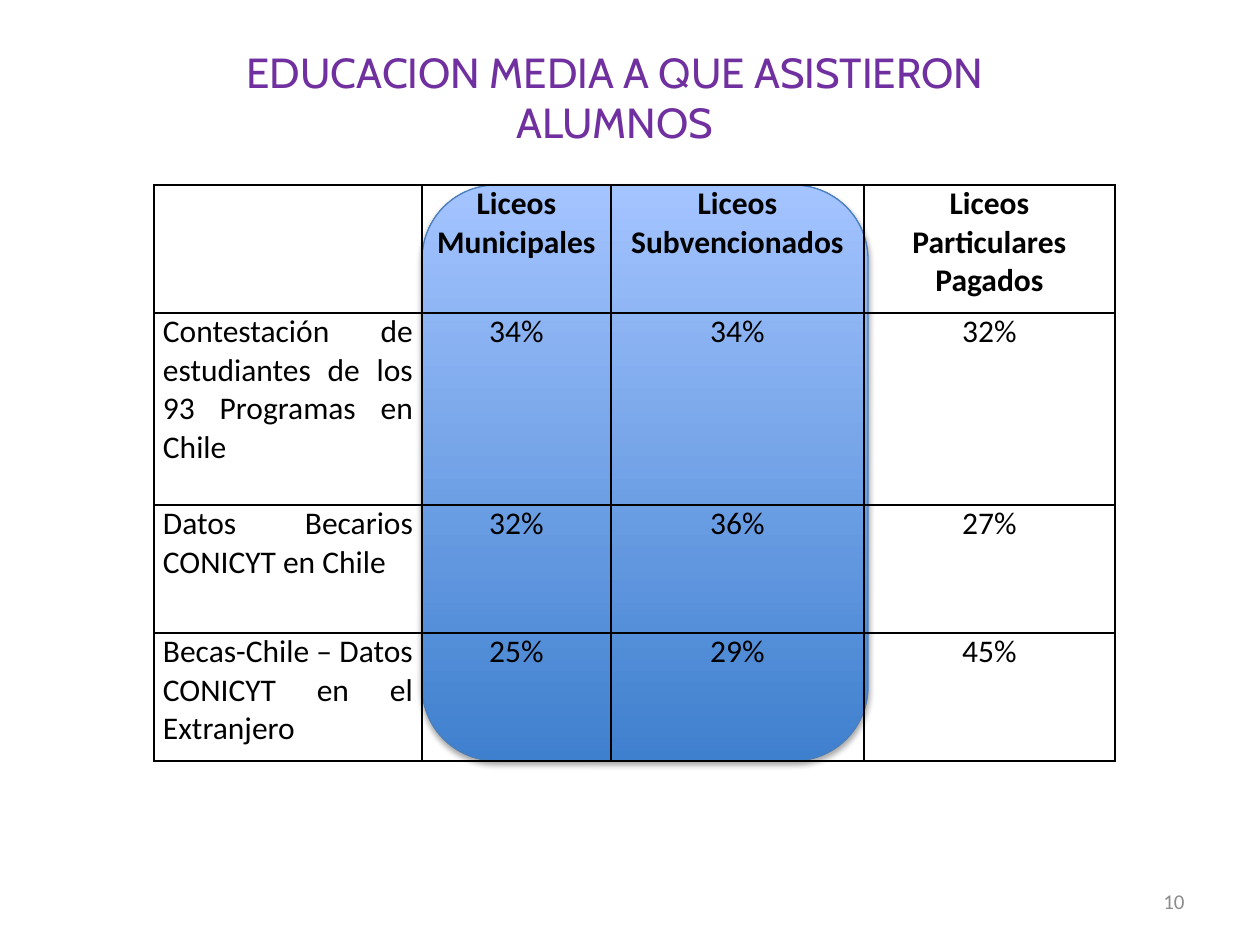
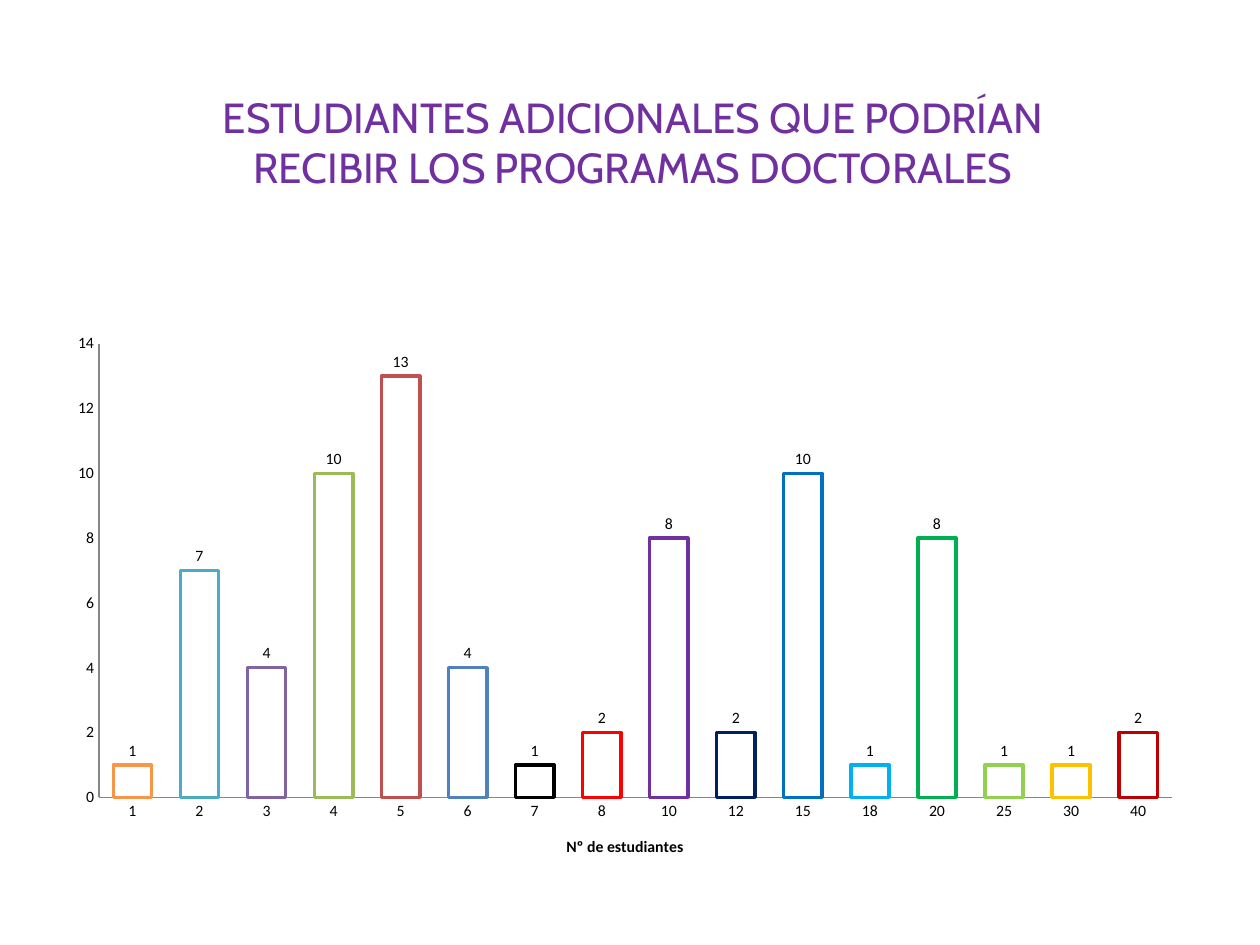
from lxml.etree import SubElement
from pptx import Presentation
from pptx.chart.data import CategoryChartData
from pptx.dml.color import RGBColor
from pptx.enum.chart import XL_CHART_TYPE as ChartType, XL_LABEL_POSITION as LabelPosition
from pptx.enum.chart import XL_TICK_MARK as TickMark
from pptx.enum.shapes import MSO_SHAPE as Shape
from pptx.enum.text import MSO_ANCHOR as Anchor, MSO_AUTO_SIZE as AutoSize, PP_ALIGN as Align
from pptx.oxml import parse_xml
from pptx.oxml.ns import nsdecls, qn
from pptx.util import Emu, Pt

# Content
SCHOOLS_TITLE = ["EDUCACION MEDIA A QUE ASISTIERON ALUMNOS"]
SCHOOLS = [
    ["", "Liceos Municipales", "Liceos Subvencionados", "Liceos Particulares Pagados"],
    ["Contestación de estudiantes de los 93 Programas en Chile", "34%", "34%", "32%"],
    ["Datos Becarios CONICYT en Chile", "32%", "36%", "27%"],
    ["Becas-Chile – Datos CONICYT en el Extranjero", "25%", "29%", "45%"],
]
PAGE_NUMBER = "10"

PLACES_TITLE = ["ESTUDIANTES ADICIONALES QUE PODRÍAN", "RECIBIR LOS PROGRAMAS DOCTORALES"]
PLACES_AXIS = "Nº de estudiantes"
# Additional students, number of programmes, outline colour
PLACES = [
    (1, 1, "F79646"), (2, 7, "4BACC6"), (3, 4, "8064A2"), (4, 10, "9BBB59"),
    (5, 13, "C0504D"), (6, 4, "4F81BD"), (7, 1, "000000"), (8, 2, "FF0000"),
    (10, 8, "7030A0"), (12, 2, "002060"), (15, 10, "0070C0"), (18, 1, "00B0F0"),
    (20, 8, "00B050"), (25, 1, "92D050"), (30, 1, "FFC000"), (40, 2, "C00000"),
]

# Shared look, lengths in px
PX_PER_INCH = 126
BLACK, WHITE, GREY = "000000", "FFFFFF", "868686"
TITLE_FONT = {"name": "Cabin", "size": Pt(24), "color": "7030A0", "bold": False}
TABLE_FONT = {"name": "Calibri", "size": Pt(18), "color": BLACK, "bold": False}
PAGE_FONT = {"name": "Calibri", "size": Pt(12), "color": "8C8C8C"}
CHART_FONT = {"name": "Calibri", "size": Pt(9), "color": BLACK, "bold": False}

TABLE_LEFT, TABLE_TOP = 154, 185
COLUMNS = [268, 189, 253, 251]
ROWS = [128, 192, 128, 128]
HIGHLIGHT_OVERHANG = 4
PLOT_AREA = {"x": 0.037, "y": 0.152, "w": 0.946, "h": 0.727}


def px(length):
    return Emu(round(length * 914400 / PX_PER_INCH))


def rgb(value):
    return RGBColor.from_string(value)


def apply(target, values):
    for key, value in values.items():
        if key == "color":
            target.color.rgb = rgb(value)
        else:
            setattr(target, key, value)


def add_title(slide, lines, box, top_margin=6):
    title = slide.shapes.title
    apply(title, dict(zip(("left", "top", "width", "height"), map(px, box))))
    frame = title.text_frame
    frame.text = "\n".join(lines)
    apply(frame, {"word_wrap": True, "auto_size": AutoSize.NONE,
                  "vertical_anchor": Anchor.MIDDLE,
                  "margin_top": px(top_margin), "margin_bottom": px(6)})
    for line in frame.paragraphs:
        line.alignment = Align.CENTER
        apply(line.runs[0].font, TITLE_FONT)


def add_highlight(slide):
    """Rounded panel behind the two publicly funded school columns."""
    panel = slide.shapes.add_shape(
        Shape.ROUNDED_RECTANGLE, px(TABLE_LEFT + COLUMNS[0]), px(TABLE_TOP),
        px(sum(COLUMNS[1:3]) + HIGHLIGHT_OVERHANG), px(sum(ROWS)))
    panel.fill.gradient()
    panel.fill.gradient_angle = 90
    for stop, (position, color) in zip(panel.fill.gradient_stops,
                                       [(0, "3F80CE"), (1, "A4C4FF")]):
        apply(stop, {"position": position, "color": color})
    apply(panel.line, {"color": "4B7EBC", "width": Pt(0.75)})
    panel.shadow.inherit = False
    effects = panel._element.spPr.find(qn("a:effectLst"))
    effects.append(parse_xml(
        f'<a:outerShdw {nsdecls("a")} blurRad="{Pt(3.1)}" dist="{Pt(1.8)}" dir="5400000" '
        f'rotWithShape="0"><a:srgbClr val="{BLACK}"><a:alpha val="35000"/></a:srgbClr>'
        '</a:outerShdw>'))


def add_borders(cell):
    properties = cell._tc.get_or_add_tcPr()
    for side in ("lnL", "lnR", "lnT", "lnB"):
        border = SubElement(properties, qn(f"a:{side}"), w=str(Pt(1)))
        fill = SubElement(border, qn("a:solidFill"))
        SubElement(fill, qn("a:srgbClr"), val=BLACK)


def add_schools_table(slide):
    table = slide.shapes.add_table(
        len(ROWS), len(COLUMNS), px(TABLE_LEFT), px(TABLE_TOP),
        px(sum(COLUMNS)), px(sum(ROWS))).table
    apply(table, {"first_row": False, "horz_banding": False})
    for column, width in zip(table.columns, COLUMNS):
        column.width = px(width)
    for row, height in zip(table.rows, ROWS):
        row.height = px(height)
    for r, entries in enumerate(SCHOOLS):
        for c, entry in enumerate(entries):
            cell = table.cell(r, c)
            add_borders(cell)
            cell.fill.background()
            apply(cell, {"text": entry, "margin_left": px(9), "margin_right": px(9),
                         "margin_top": 0, "margin_bottom": 0})
            paragraph = cell.text_frame.paragraphs[0]
            paragraph.alignment = Align.CENTER if c else Align.JUSTIFY
            apply(paragraph.font, {**TABLE_FONT, "bold": r == 0})
            for run in paragraph.runs:
                apply(run.font, {**TABLE_FONT, "bold": r == 0})


def add_page_number(slide):
    frame = slide.shapes.add_textbox(px(903), px(876), px(294), px(50)).text_frame
    apply(frame, {"text": PAGE_NUMBER, "word_wrap": True, "vertical_anchor": Anchor.MIDDLE})
    frame.paragraphs[0].alignment = Align.RIGHT
    apply(frame.paragraphs[0].runs[0].font, PAGE_FONT)


def add_places_chart(slide):
    students, programmes, outlines = zip(*PLACES)
    data = CategoryChartData()
    data.categories = [str(count) for count in students]
    data.add_series("Series 1", programmes)
    chart = slide.shapes.add_chart(ChartType.COLUMN_CLUSTERED, px(57), px(249),
                                   px(1134), px(624), data).chart
    apply(chart, {"has_legend": False, "has_title": False})
    apply(chart.font, CHART_FONT)

    # Axes
    for axis in (chart.category_axis, chart.value_axis):
        apply(axis, {"has_major_gridlines": False, "major_tick_mark": TickMark.NONE,
                     "minor_tick_mark": TickMark.NONE})
        apply(axis.format.line, {"color": GREY, "width": Pt(0.75)})
    apply(chart.value_axis, {"minimum_scale": 0, "maximum_scale": 14, "major_unit": 2})
    caption = chart.category_axis.axis_title.text_frame
    caption.text = PLACES_AXIS
    apply(caption.paragraphs[0].runs[0].font, {**CHART_FONT, "bold": True})

    # Columns and their labels
    plot = chart.plots[0]
    apply(plot, {"gap_width": 75, "vary_by_categories": False, "has_data_labels": True})
    apply(plot.data_labels, {"show_value": True, "position": LabelPosition.OUTSIDE_END})
    apply(plot.data_labels.font, CHART_FONT)
    series = plot.series[0]
    series.invert_if_negative = False
    for index, outline in enumerate(outlines):
        column = series.points[index].format
        column.fill.solid()
        column.fill.fore_color.rgb = rgb(WHITE)
        apply(column.line, {"color": outline, "width": Pt(2)})

    # Fixed plot area
    plot_area = chart._chartSpace.chart.plotArea
    for layout in plot_area.findall(qn("c:layout")):
        plot_area.remove(layout)
    modes = '<c:xMode val="edge"/><c:yMode val="edge"/>'
    sizes = "".join(f'<c:{key} val="{value}"/>' for key, value in PLOT_AREA.items())
    plot_area.insert(0, parse_xml(
        f'<c:layout {nsdecls("c")}><c:manualLayout><c:layoutTarget val="inner"/>'
        f'{modes}{sizes}</c:manualLayout></c:layout>'))


def main():
    deck = Presentation()
    apply(deck, {"slide_width": px(1260), "slide_height": px(945)})
    title_only = deck.slide_layouts[5]

    # Secondary schools attended
    schools = deck.slides.add_slide(title_only)
    add_highlight(schools)
    add_schools_table(schools)
    add_title(schools, SCHOOLS_TITLE, (165, 37, 900, 120))
    add_page_number(schools)

    # Additional students per programme
    places = deck.slides.add_slide(title_only)
    add_title(places, PLACES_TITLE, (66, 37, 1134, 158), top_margin=58)
    add_places_chart(places)

    deck.save("out.pptx")


if __name__ == "__main__":
    main()
